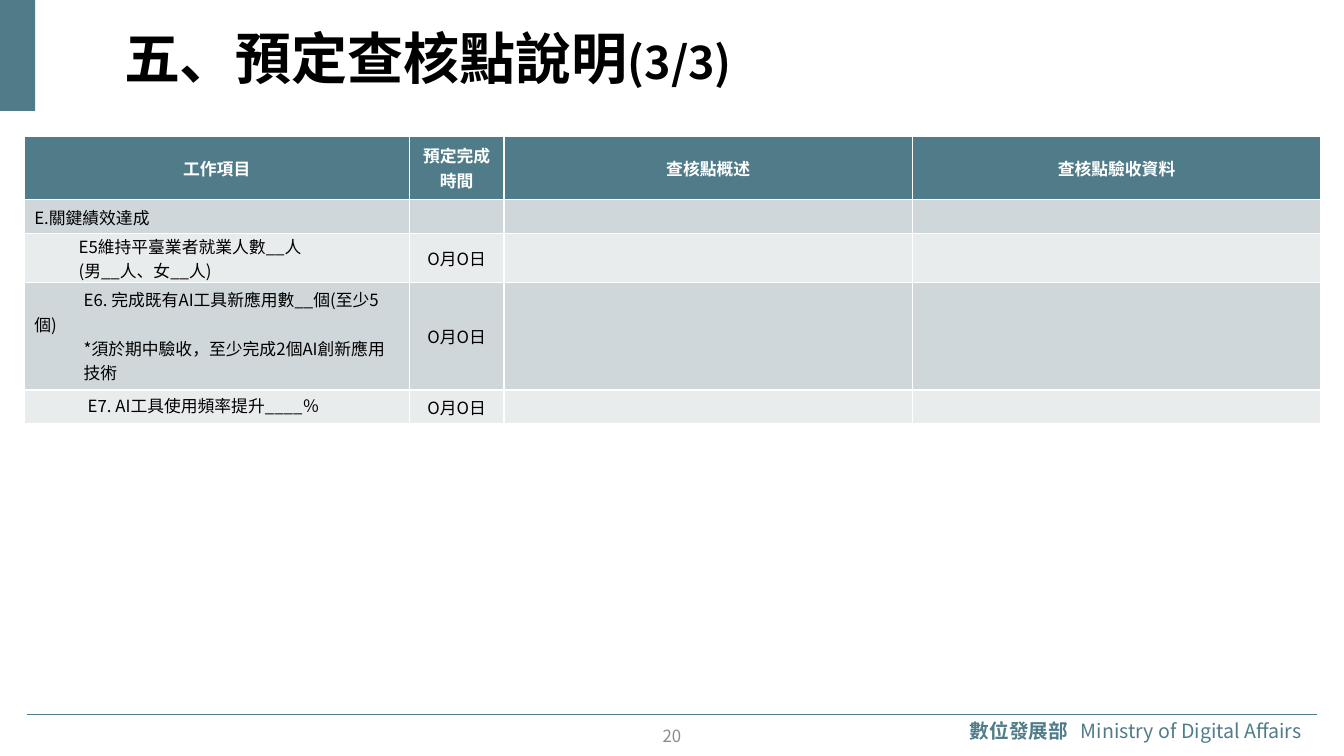
from lxml import etree
from pptx import Presentation
from pptx.dml.color import RGBColor
from pptx.enum.shapes import MSO_CONNECTOR, MSO_SHAPE
from pptx.enum.text import MSO_ANCHOR, PP_ALIGN
from pptx.oxml.ns import qn
from pptx.util import Inches, Pt

FONT = "Noto Sans CJK SC"
TEAL = RGBColor(0x50, 0x7C, 0x89)
BLACK = RGBColor(0, 0, 0)
WHITE = RGBColor(0xFF, 0xFF, 0xFF)
GRAY = RGBColor(0x8C, 0x8C, 0x8C)
BANDS = [RGBColor(0xD0, 0xD7, 0xDA), RGBColor(0xE9, 0xEC, 0xED)]
LEFT, CENTER, MIDDLE, TOP = PP_ALIGN.LEFT, PP_ALIGN.CENTER, MSO_ANCHOR.MIDDLE, MSO_ANCHOR.TOP


def add_run(paragraph, text, size, color, bold=False):
    run = paragraph.add_run()
    run.text = text
    run.font.name, run.font.size, run.font.bold = FONT, Pt(size), bold
    run.font.color.rgb = color
    etree.SubElement(run.font._element, qn("a:ea"), typeface=FONT)


def set_frame(frame, side, edge):
    frame.word_wrap = True
    frame.vertical_anchor = MIDDLE
    frame.margin_left = frame.margin_right = Inches(side)
    frame.margin_top = frame.margin_bottom = Inches(edge)


presentation = Presentation()
presentation.slide_width, presentation.slide_height = Inches(13.33), Inches(7.5)
slide = presentation.slides.add_slide(presentation.slide_layouts[5])
shapes = slide.shapes

# Footer rule
rule = shapes.add_connector(MSO_CONNECTOR.STRAIGHT, Inches(0.27), Inches(7.09), Inches(13.06), Inches(7.09))
rule.line.color.rgb = TEAL
rule.line.width = Pt(0.5)
etree.SubElement(rule._element.spPr, qn("a:effectLst"))

# Ministry name, its two languages set apart by a tab stop
ministry = shapes.add_textbox(Inches(9.54), Inches(7.09), Inches(3.52), Inches(0.32))
set_frame(ministry.text_frame, 0.08, 0.04)
paragraph = ministry.text_frame.paragraphs[0]
tabs = etree.SubElement(paragraph._p.get_or_add_pPr(), qn("a:tabLst"))
etree.SubElement(tabs, qn("a:tab"), pos=str(Inches(1.1)), algn="l")
add_run(paragraph, "數位發展部", 14, TEAL, True)
add_run(paragraph, "\tMinistry of Digital Affairs", 14, TEAL)

# Corner block
corner = shapes.add_shape(MSO_SHAPE.RECTANGLE, 0, 0, Inches(0.35), Inches(1.1))
corner.shadow.inherit = False
corner.fill.solid()
corner.fill.fore_color.rgb = TEAL
corner.line.fill.background()

# Title
title = shapes.title
title.left, title.top, title.width, title.height = Inches(1.15), Inches(0.08), Inches(11.81), Inches(0.98)
set_frame(title.text_frame, 0.08, 0.04)
paragraph = title.text_frame.paragraphs[0]
paragraph.alignment = LEFT
add_run(paragraph, "五、預定查核點說明", 40, BLACK, True)
add_run(paragraph, "(3/3)", 32, BLACK, True)

# Page number
page_number = shapes.add_textbox(Inches(5.68), Inches(7.2), Inches(1.97), Inches(0.2))
set_frame(page_number.text_frame, 0.08, 0)
paragraph = page_number.text_frame.paragraphs[0]
paragraph.alignment = CENTER
add_run(paragraph, "20", 12, GRAY)

# Checkpoint table: work item lines as (text, left margin, first-line indent)
HEADERS = ["工作項目", "預定完成時間", "查核點概述", "查核點驗收資料"]
DATE = "O月O日"
ITEMS = [
    ([("E.關鍵績效達成", 0, 0)], ""),
    ([("E5維持平臺業者就業人數__人", 0.5, 0), ("(男__人、女__人)", 0.5, 0)], DATE),
    ([("E6. 完成既有AI工具新應用數__個(至少5個)", 0, 0.49),
      ("*須於期中驗收，至少完成2個AI創新應用技術", 0.49, 0)], DATE),
    ([("E7. AI工具使用頻率提升____％", 0.04, 0.55)], DATE),
]
COLUMN_WIDTHS = [3.82, 0.94, 4.05, 4.05]
ROW_HEIGHTS = [0.63, 0.34, 0.48, 1.07, 0.33]
TIGHT_ROWS = (2, 4)

table = shapes.add_table(len(ROW_HEIGHTS), len(COLUMN_WIDTHS), Inches(0.24), Inches(1.35),
                         Inches(sum(COLUMN_WIDTHS)), Inches(sum(ROW_HEIGHTS))).table
for column, width in zip(table.columns, COLUMN_WIDTHS):
    column.width = Inches(width)
for row, height in zip(table.rows, ROW_HEIGHTS):
    row.height = Inches(height)

rows = [[[(header, 0, 0)] for header in HEADERS]]
rows += [[lines, [(date, 0, 0)], [("", 0, 0)], [("", 0, 0)]] for lines, date in ITEMS]
for row_index, row in enumerate(rows):
    is_header = row_index == 0
    for column_index, lines in enumerate(row):
        cell = table.cell(row_index, column_index)
        is_item = column_index == 0 and not is_header
        is_tight = is_item and row_index in TIGHT_ROWS
        cell.fill.solid()
        cell.fill.fore_color.rgb = TEAL if is_header else BANDS[(row_index - 1) % 2]
        cell.vertical_anchor = TOP if is_item and not is_tight else MIDDLE
        if is_tight:
            cell.margin_left = cell.margin_right = Inches(0.04)
            cell.margin_top = cell.margin_bottom = 0
        for line_index, (text, margin, indent) in enumerate(lines):
            frame = cell.text_frame
            paragraph = frame.add_paragraph() if line_index else frame.paragraphs[0]
            paragraph.alignment = LEFT if is_item else CENTER
            properties = paragraph._p.get_or_add_pPr()
            properties.set("marL", str(Inches(margin)))
            properties.set("indent", str(Inches(indent)))
            if text:
                add_run(paragraph, text, 12, WHITE if is_header else BLACK, is_header)
            else:  # keeps empty cells from stretching the row
                etree.SubElement(paragraph._p, qn("a:endParaRPr"), sz="1200")

# Fixed line pitch in the last work item
table.cell(4, 0).text_frame.paragraphs[0].line_spacing = Pt(15)

presentation.save("out.pptx")
